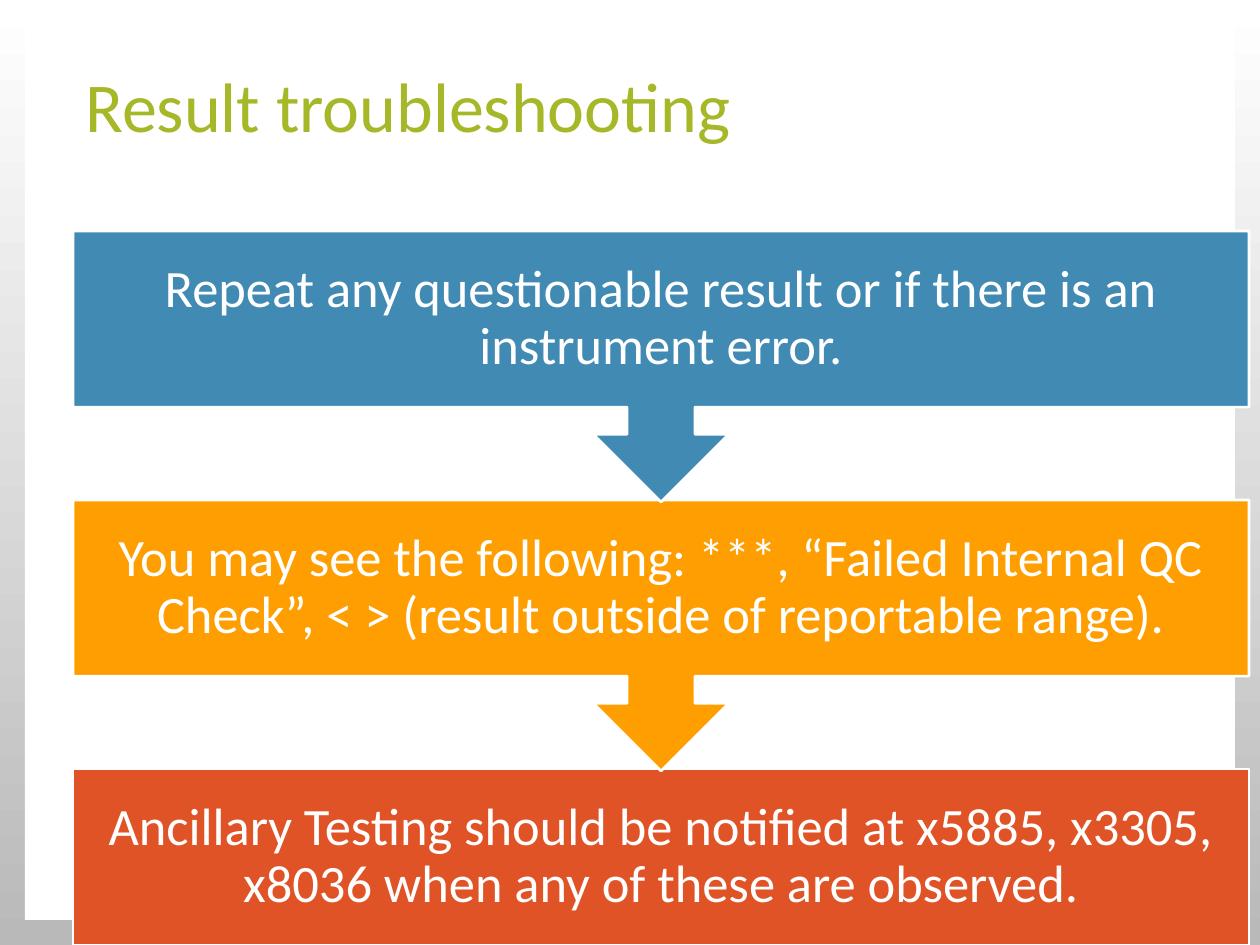
from pptx import Presentation
from pptx import util as u
from pptx.dml.color import RGBColor
from pptx.enum import shapes, text

SCALE = 914400 / 126
LEFT, TOP, WIDTH = 73, 231, 1176
STEP, TALL, BOX = 269, 271, 176
STEPS = [
    ("418AB3", "Repeat any questionable result or if there is an instrument error."),
    ("FE9E00", "You may see the following: ***, “Failed Internal QC Check”, "
               "< > (result outside of reportable range)."),
    ("DF5327", "Ancillary Testing should be notified at x5885, x3305, "
               "x8036 when any of these are observed."),
]


def px(*vals):
    return [u.Emu(round(v * SCALE)) for v in vals]


def rgb(code):
    return RGBColor.from_string(code)


class Deck:
    font = "Calibri"
    white = "FFFFFF"

    def __init__(self, wide, high):
        self.prs = Presentation()
        self.prs.slide_width, self.prs.slide_height = px(wide, high)
        self.slide = self.prs.slides.add_slide(self.prs.slide_layouts[6])

    def back(self, *codes):
        fill = self.slide.background.fill
        fill.gradient()
        fill.gradient_angle = 270
        for stop, code in zip(fill.gradient_stops, codes):
            stop.color.rgb = rgb(code)

    def shape(self, kind, box, fill, line=None, turn=0):
        item = self.slide.shapes.add_shape(kind, *px(*box))
        item.shadow.inherit = False
        item.rotation = turn
        item.fill.solid()
        item.fill.fore_color.rgb = rgb(fill)
        if line:
            item.line.color.rgb = rgb(line)
            item.line.width = u.Pt(1.5)
        else:
            item.line.fill.background()

    def text(self, words, box, size, color, align=text.PP_ALIGN.LEFT, pad=None):
        frame = self.slide.shapes.add_textbox(*px(*box)).text_frame
        frame.word_wrap = True
        frame.vertical_anchor = text.MSO_ANCHOR.MIDDLE
        if pad is not None:
            (frame.margin_left, frame.margin_top,
             frame.margin_right, frame.margin_bottom) = px(*[pad] * 4)
        para = frame.paragraphs[0]
        para.alignment = align
        para.line_spacing = 0.9
        run = para.add_run()
        run.text = words
        run.font.name = self.font
        run.font.size = u.Pt(size)
        run.font.color.rgb = rgb(color)


def main():
    kinds = shapes.MSO_SHAPE
    deck = Deck(1260, 945)
    deck.back("FFFFFF", "B9B9B9")
    deck.shape(kinds.RECTANGLE, (25, 25, 1210, 895), deck.white)
    deck.text("Result troubleshooting", (LEFT, 0, 1071, 220), 40, "A6B727")

    last = len(STEPS) - 1
    for i, (color, words) in reversed(list(enumerate(STEPS))):
        top = TOP + i * STEP
        box = (LEFT, top, WIDTH, BOX)
        if i == last:
            deck.shape(kinds.RECTANGLE, box, color, deck.white)
        else:
            deck.shape(kinds.UP_ARROW_CALLOUT, (LEFT, top, WIDTH, TALL),
                       color, deck.white, turn=180)
        deck.text(words, box, 30, deck.white, text.PP_ALIGN.CENTER, pad=29)

    deck.prs.save("out.pptx")


if __name__ == "__main__":
    main()
